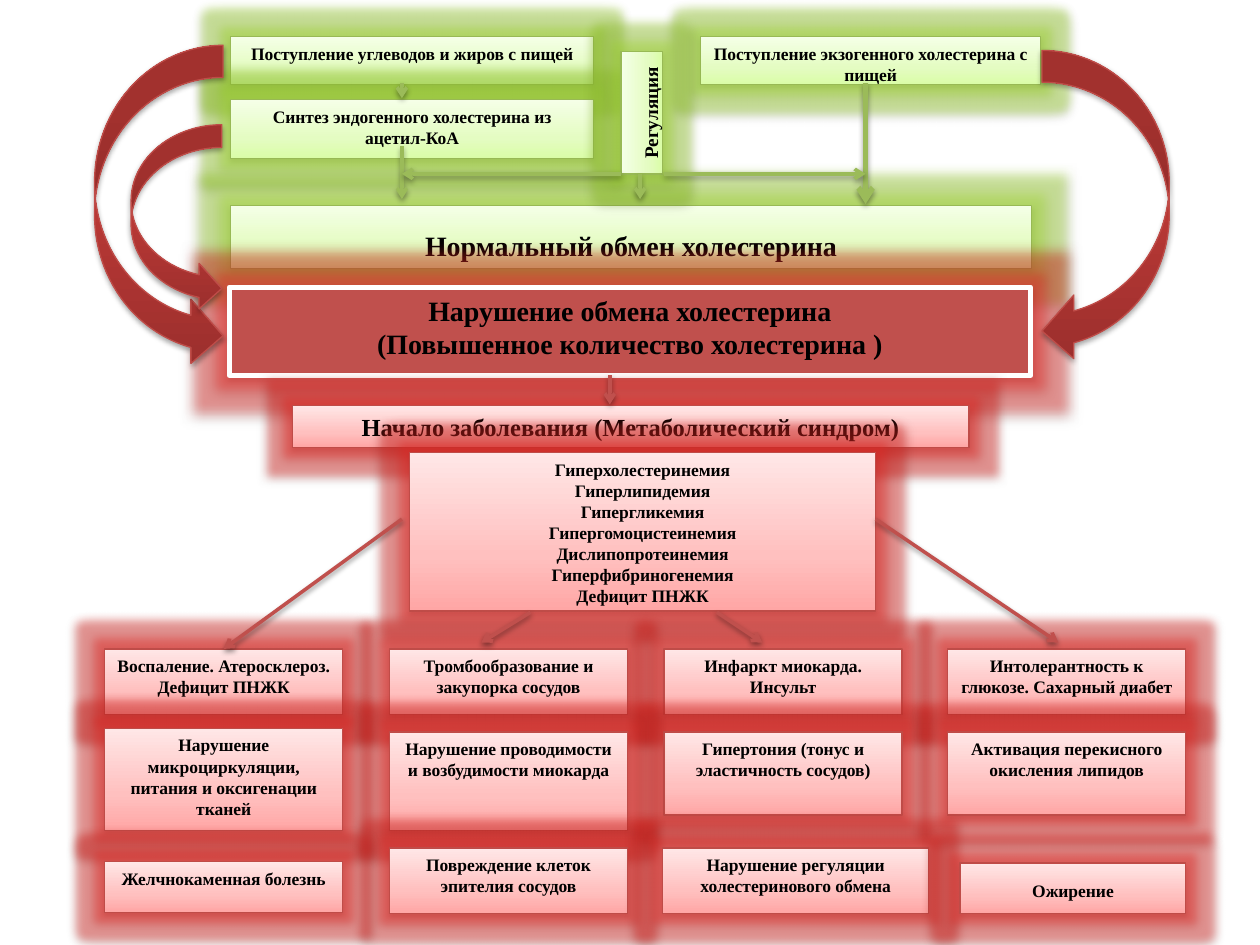
from dataclasses import dataclass

import pptx
import pptx.dml.color
import pptx.enum.shapes
import pptx.enum.text
import pptx.oxml
import pptx.oxml.ns
import pptx.util
from pptx.util import Inches

COLORS = {
    "text": "000000", "white": "FFFFFF", "disorder": "C0504D",
    "green_edge": "98B955", "red_edge": "BF4C48",
    "green_arrow": "9BBB59", "red_arrow": "C0504D",
    "green_glow": "A8E034", "red_glow": "EB2722",
}
GRADIENTS = {
    "green": [(0, "DAFDA7"), (35, "E4FCC2"), (100, "F5FFE7")],
    "red": [(0, "FFA6A5"), (35, "FFC0BF"), (100, "FFE7E7")],
    "dark": [(0, "9C2F2D"), (80, "CB3E3A"), (100, "CE3B37")],
}
FONT = "Times New Roman"
AUTO = pptx.enum.shapes.MSO_SHAPE
NS = pptx.oxml.ns.nsdecls("a")


@dataclass
class Box:
    left: float
    top: float
    width: float
    height: float
    text: str
    tone: str = "red"
    size: int = 10
    spacing: float = 1.0
    rotation: int = 0
    solid: bool = False
    glow: float = 11


@dataclass
class Arrow:
    x1: float
    y1: float
    x2: float
    y2: float
    tone: str = "red"
    width: float = 2


@dataclass
class Loop:
    left: float
    top: float
    width: float
    height: float
    kind: AUTO = AUTO.CURVED_RIGHT_ARROW


def rgb(name: str) -> pptx.dml.color.RGBColor:
    return pptx.dml.color.RGBColor.from_string(COLORS[name])


def add_effects(part, glow_color: str = "", glow: float = 0, alpha: int = 38) -> None:
    halo = ""
    if glow:
        halo = (f'<a:glow rad="{pptx.util.Pt(glow)}"><a:srgbClr val="{glow_color}">'
                '<a:alpha val="40000"/></a:srgbClr></a:glow>')
    part._element.spPr.append(pptx.oxml.parse_xml(
        f'<a:effectLst {NS}>{halo}<a:outerShdw blurRad="40000" dist="20000" dir="5400000" '
        f'rotWithShape="0"><a:srgbClr val="000000"><a:alpha val="{alpha * 1000}"/>'
        '</a:srgbClr></a:outerShdw></a:effectLst>'))


def fill_gradient(shape, tone: str) -> None:
    shape.fill.gradient()
    shape.fill.gradient_angle = 90
    stops = shape._element.spPr.find(".//" + pptx.oxml.ns.qn("a:gsLst"))
    for stop in list(stops):
        stops.remove(stop)
    for position, color in GRADIENTS[tone]:
        stops.append(pptx.oxml.parse_xml(
            f'<a:gs {NS} pos="{position * 1000}"><a:srgbClr val="{color}"/></a:gs>'))


def outline(shape, color: str, width: float) -> None:
    shape.line.color.rgb = rgb(color)
    shape.line.width = pptx.util.Pt(width)


def draw_box(slide, box: Box):
    shape = slide.shapes.add_shape(AUTO.RECTANGLE, Inches(box.left), Inches(box.top),
                                   Inches(box.width), Inches(box.height))
    shape.rotation = box.rotation
    if box.solid:
        shape.fill.solid()
        shape.fill.fore_color.rgb = rgb("disorder")
        outline(shape, "white", 3)
    else:
        fill_gradient(shape, box.tone)
        outline(shape, f"{box.tone}_edge", 0.75)
    add_effects(shape, COLORS[f"{box.tone}_glow"], box.glow)
    frame = shape.text_frame
    frame.word_wrap = True
    frame.vertical_anchor = pptx.enum.text.MSO_ANCHOR.TOP
    frame.text = box.text
    for paragraph in frame.paragraphs:
        paragraph.alignment = pptx.enum.text.PP_ALIGN.CENTER
        paragraph.line_spacing = box.spacing
        for run in paragraph.runs:
            run.font.name = FONT
            run.font.size = pptx.util.Pt(box.size)
            run.font.bold = True
            run.font.color.rgb = rgb("text")
    return shape


def draw_arrow(slide, arrow: Arrow):
    connector = slide.shapes.add_connector(
        pptx.enum.shapes.MSO_CONNECTOR.STRAIGHT,
        Inches(arrow.x1), Inches(arrow.y1), Inches(arrow.x2), Inches(arrow.y2))
    outline(connector, f"{arrow.tone}_arrow", arrow.width)
    connector.line._get_or_add_ln().append(
        pptx.oxml.parse_xml(f'<a:tailEnd {NS} type="arrow"/>'))
    add_effects(connector)
    return connector


def draw_loop(slide, loop: Loop) -> None:
    shape = slide.shapes.add_shape(loop.kind, Inches(loop.left), Inches(loop.top),
                                   Inches(loop.width), Inches(loop.height))
    fill_gradient(shape, "dark")
    outline(shape, "red_edge", 0.75)
    add_effects(shape, alpha=35)


COLUMNS = [0.83, 3.09, 5.27, 7.52]
CELL_WIDTH = 1.89
FIRST_ROW, FIRST_HEIGHT = 5.15, 0.52

METABOLISM = [
    Box(1.83, 0.29, 2.88, 0.38, "Поступление углеводов и жиров с пищей", "green"),
    Box(1.83, 0.79, 2.88, 0.47, "Синтез эндогенного холестерина из ацетил-КоА", "green"),
    Box(5.56, 0.29, 2.7, 0.38, "Поступление экзогенного холестерина с пищей", "green"),
    Box(1.83, 1.63, 6.36, 0.5, "Нормальный обмен холестерина", "green", 16, 1.5, glow=13),
    Box(1.82, 2.28, 6.36, 0.7,
        "Нарушение обмена холестерина\n(Повышенное количество холестерина )",
        size=16, solid=True, glow=13),
    Box(2.32, 3.22, 5.37, 0.33, "Начало заболевания (Метаболический синдром)", size=14),
    Box(3.25, 3.59, 3.7, 1.26, "\n".join([
        "Гиперхолестеринемия", "Гиперлипидемия", "Гипергликемия", "Гипергомоцистеинемия",
        "Дислипопротеинемия", "Гиперфибриногенемия", "Дефицит ПНЖК"])),
]
OUTCOMES = [
    "Воспаление. Атеросклероз. Дефицит ПНЖК", "Тромбообразование и закупорка сосудов",
    "Инфаркт миокарда. Инсульт", "Интолерантность к глюкозе. Сахарный диабет",
]
CONSEQUENCES = [
    Box(COLUMNS[0], 5.78, CELL_WIDTH, 0.81,
        "Нарушение микроциркуляции, питания и оксигенации тканей"),
    Box(COLUMNS[2], 5.81, CELL_WIDTH, 0.66, "Гипертония (тонус и эластичность сосудов)"),
    Box(COLUMNS[1], 5.81, CELL_WIDTH, 0.78, "Нарушение проводимости и возбудимости миокарда"),
    Box(COLUMNS[1], 6.73, CELL_WIDTH, 0.52, "Повреждение клеток эпителия сосудов"),
    Box(COLUMNS[3], 5.81, CELL_WIDTH, 0.66, "Активация перекисного окисления липидов"),
    Box(COLUMNS[0], 6.84, CELL_WIDTH, 0.4, "Желчнокаменная болезнь"),
    Box(5.26, 6.73, 2.11, 0.52, "Нарушение регуляции холестеринового обмена"),
    Box(7.62, 6.85, 1.79, 0.4, "Ожирение", spacing=1.5),
]
REGULATION = Box(4.61, 0.73, 0.97, 0.33, "Регуляция", "green", 11, 1.5, 270)
FLOW = [
    Arrow(3.19, 0.66, 3.19, 0.78, "green"), Arrow(3.19, 1.16, 3.19, 1.58, "green"),
    Arrow(6.87, 0.66, 6.87, 1.62, "green", 3), Arrow(4.84, 2.98, 4.84, 3.21),
    Arrow(6.95, 4.12, 8.4, 5.1), Arrow(4.21, 4.86, 3.82, 5.1), Arrow(5.69, 4.86, 6.05, 5.1),
]
TO_INFLAMMATION = Arrow(3.19, 4.12, 1.77, 5.15)
REGULATION_FLOW = [
    Arrow(4.93, 1.38, 3.19, 1.38, "green"), Arrow(5.27, 1.38, 6.87, 1.38, "green"),
    Arrow(5.08, 1.38, 5.08, 1.58, "green"),
]
LOOPS = [
    Loop(0.75, 0.36, 1.02, 2.56), Loop(1.04, 0.99, 0.72, 1.48),
    Loop(8.27, 0.4, 1.01, 2.48, AUTO.CURVED_LEFT_ARROW),
]


def main() -> None:
    deck = pptx.Presentation()
    deck.slide_width, deck.slide_height = Inches(10), Inches(7.5)
    slide = deck.slides.add_slide(deck.slide_layouts[6])
    for box in METABOLISM:
        draw_box(slide, box)
    outcomes = [draw_box(slide, Box(left, FIRST_ROW, CELL_WIDTH, FIRST_HEIGHT, text))
                for left, text in zip(COLUMNS, OUTCOMES)]
    for box in CONSEQUENCES:
        draw_box(slide, box)
    for arrow in FLOW:
        draw_arrow(slide, arrow)
    draw_arrow(slide, TO_INFLAMMATION).end_connect(outcomes[0], 0)
    for loop in LOOPS:
        draw_loop(slide, loop)
    draw_box(slide, REGULATION)
    for arrow in REGULATION_FLOW:
        draw_arrow(slide, arrow)
    deck.save("out.pptx")


if __name__ == "__main__":
    main()
